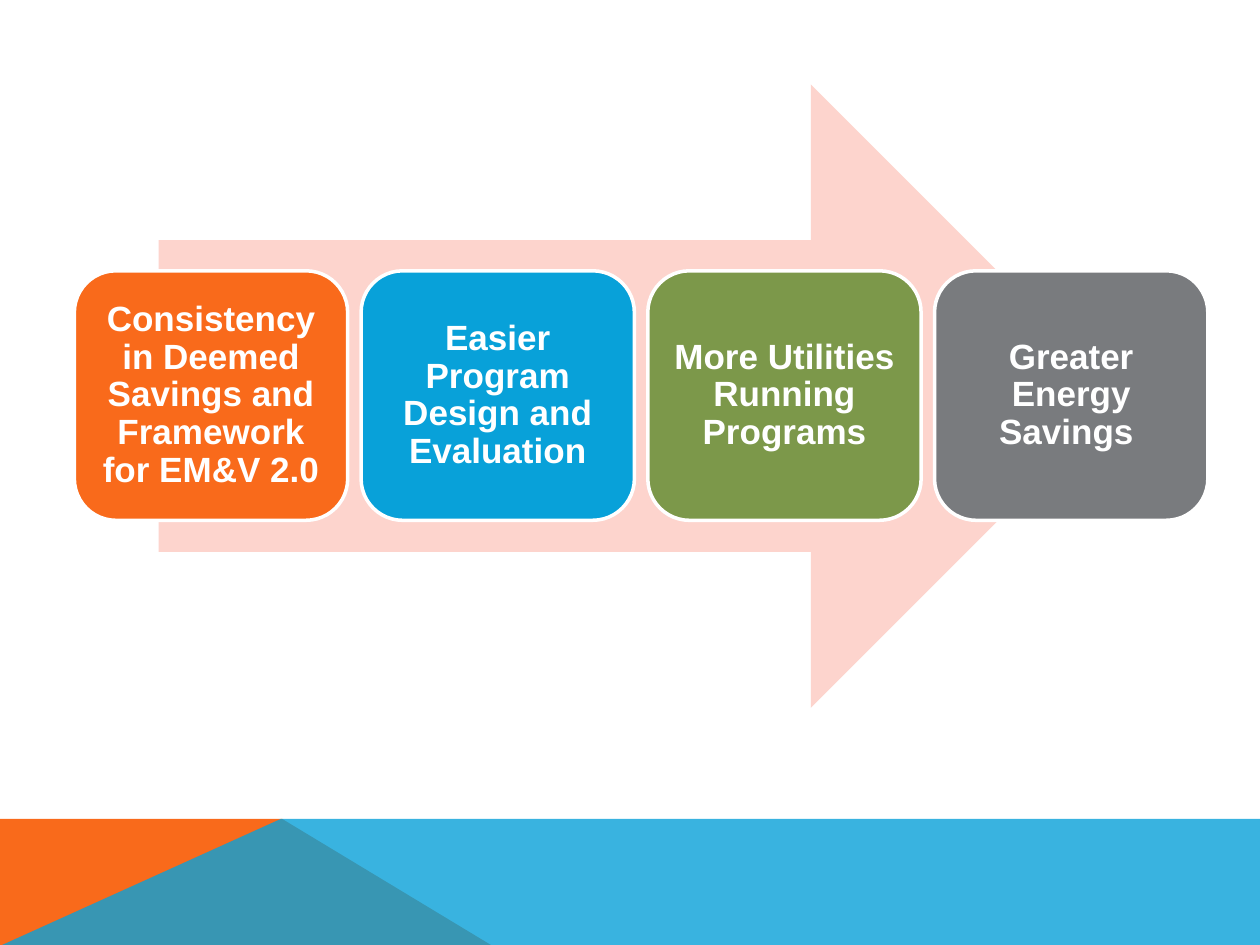
from lxml.etree import SubElement
from pptx import Presentation
from pptx.dml.color import RGBColor
from pptx.enum.shapes import MSO_SHAPE
from pptx.enum.text import MSO_ANCHOR, PP_ALIGN
from pptx.oxml.ns import qn
from pptx.util import Cm, Pt

ORANGE, BLUE, GREEN, GRAY = "F96A1B", "08A1D9", "7C984A", "797B7E"
PINK, WHITE = "FDD4CD", "FFFFFF"

STEPS = [
    ("Consistency in Deemed Savings and Framework for EM&V 2.0", ORANGE),
    ("Easier Program Design and Evaluation", BLUE),
    ("More Utilities Running Programs", GREEN),
    ("Greater Energy Savings ", GRAY),
]
STEP_LEFT, STEP_TOP, STEP_WIDTH, STEP_HEIGHT, STEP_PITCH = 1.5, 5.46, 5.51, 5.03, 5.78
SLIDE_WIDTH, SLIDE_HEIGHT = 25.4, 19.05
BAND_TOP, BAND_BOTTOM = 16.51, 19.07


def color(value):
    return RGBColor.from_string(value)


def apply_format(target, values):
    for name, value in values.items():
        setattr(target, name, value)


class SlideBuilder:
    inset = Cm(0.2)
    frame_format = {
        "word_wrap": True,
        "vertical_anchor": MSO_ANCHOR.MIDDLE,
        "margin_left": inset,
        "margin_right": inset,
        "margin_top": inset,
        "margin_bottom": inset,
    }
    paragraph_format = {"alignment": PP_ALIGN.CENTER, "line_spacing": 0.9}
    font_format = {"name": "Arial", "size": Pt(20), "bold": True}

    def __init__(self, slide):
        self.slide = slide

    def paint(self, shape, fill, line=None):
        shape.shadow.inherit = False
        shape.fill.solid()
        shape.fill.fore_color.rgb = color(fill)
        if line:
            shape.line.color.rgb = color(line)
            shape.line.width = Pt(2)
        else:
            shape.line.fill.background()

    def polygon(self, points, fill, opacity=100):
        corners = [(Cm(x), Cm(y)) for x, y in points]
        builder = self.slide.shapes.build_freeform(*corners[0])
        builder.add_line_segments(corners[1:], close=True)
        shape = builder.convert_to_shape()
        self.paint(shape, fill)
        if opacity < 100:
            rgb = shape.fill._xPr.find(qn("a:solidFill"))[0]
            SubElement(rgb, qn("a:alpha"), val=str(opacity * 1000))

    def preset(self, kind, left, top, width, height, fill, line=None):
        shape = self.slide.shapes.add_shape(
            kind, Cm(left), Cm(top), Cm(width), Cm(height))
        self.paint(shape, fill, line)
        return shape

    def step(self, left, text, fill):
        shape = self.preset(MSO_SHAPE.ROUNDED_RECTANGLE, left, STEP_TOP,
                            STEP_WIDTH, STEP_HEIGHT, fill, WHITE)
        apply_format(shape.text_frame, self.frame_format)
        paragraph = shape.text_frame.paragraphs[0]
        apply_format(paragraph, self.paragraph_format)
        run = paragraph.add_run()
        run.text = text
        apply_format(run.font, self.font_format)
        run.font.color.rgb = color(WHITE)


def main():
    presentation = Presentation()
    presentation.slide_width = Cm(SLIDE_WIDTH)
    presentation.slide_height = Cm(SLIDE_HEIGHT)
    slide = presentation.slides.add_slide(presentation.slide_layouts[6])
    builder = SlideBuilder(slide)

    builder.polygon([(0, BAND_BOTTOM), (0, BAND_TOP), (5.69, BAND_TOP),
                     (9.93, BAND_BOTTOM)], ORANGE)
    builder.polygon([(0, BAND_BOTTOM), (5.66, BAND_TOP), (SLIDE_WIDTH, BAND_TOP),
                     (SLIDE_WIDTH, BAND_BOTTOM)], BLUE, opacity=80)
    builder.preset(MSO_SHAPE.RIGHT_ARROW, 3.2, 1.7, 19.43, 12.57, PINK)
    for index, (text, fill) in enumerate(STEPS):
        builder.step(STEP_LEFT + index * STEP_PITCH, text, fill)

    presentation.save("out.pptx")


if __name__ == "__main__":
    main()
